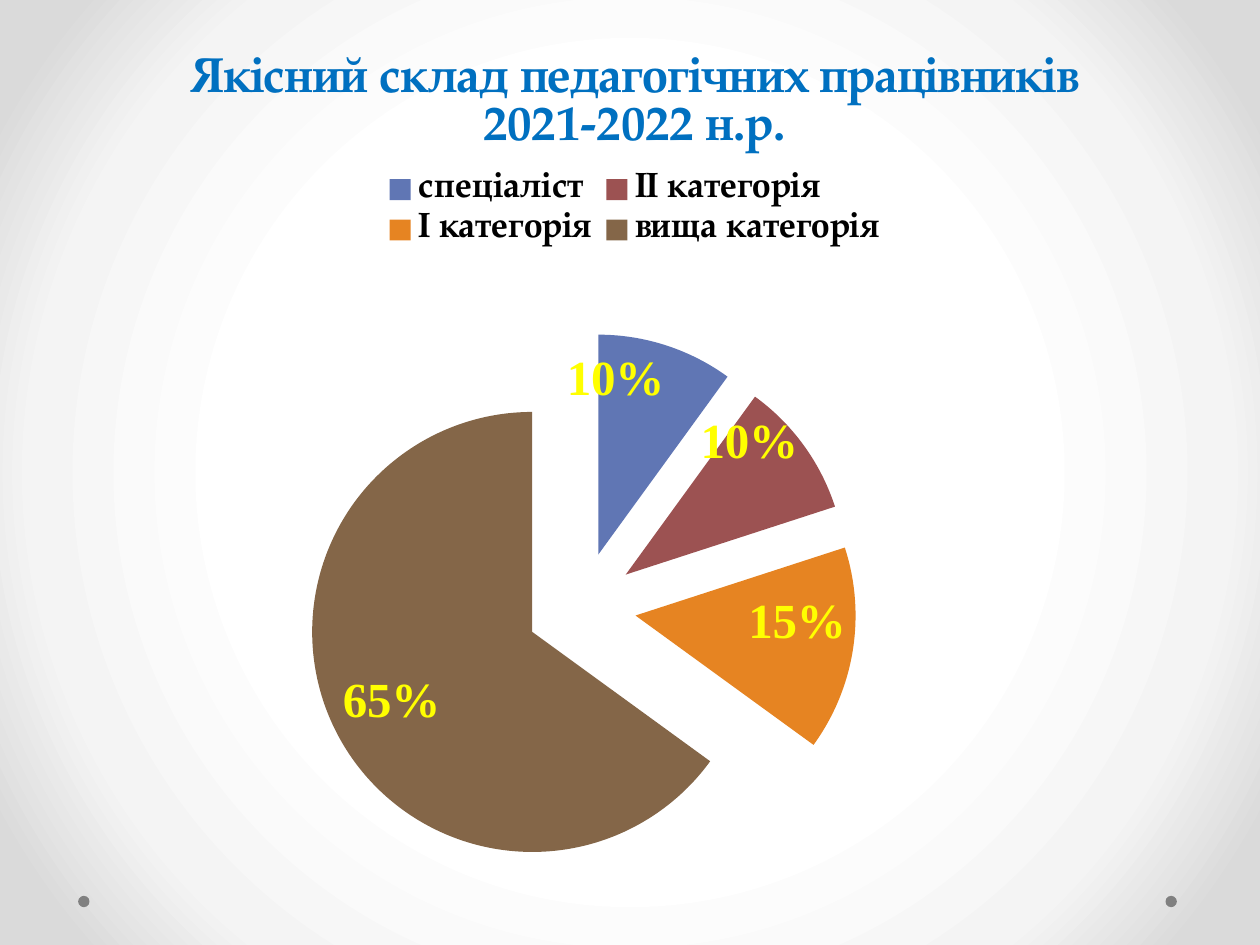
from lxml import etree
from pptx import Presentation
from pptx.chart.data import CategoryChartData
from pptx.dml.color import RGBColor
from pptx.enum import chart as ch, shapes, text
from pptx.oxml import parse_xml
from pptx.oxml.ns import nsdecls, qn
from pptx.util import Inches, Pt

BLUE = RGBColor(0x00, 0x70, 0xC0)
BLACK = RGBColor(0, 0, 0)
YELLOW = RGBColor(0xFF, 0xFF, 0x00)
GRAY = RGBColor(0x80, 0x80, 0x80)
FONT = "TeX Gyre Pagella"

TITLE_LINES = ["Якісний склад педагогічних працівників", "2021-2022 н.р."]
CATEGORIES = [
    ("спеціаліст", 10, RGBColor(0x60, 0x76, 0xB4)),
    ("ІІ категорія", 10, RGBColor(0x9C, 0x52, 0x52)),
    ("І категорія", 15, RGBColor(0xE6, 0x84, 0x22)),
    ("вища категорія", 65, RGBColor(0x84, 0x66, 0x48)),
]


def make_layout(**values):
    """Return a manual chart layout; values are fractions of the chart size."""
    layout = etree.Element(qn("c:layout"))
    manual = etree.SubElement(layout, qn("c:manualLayout"))
    for name, value in values.items():
        etree.SubElement(manual, qn(f"c:{name}")).set("val", str(value))
    return layout


deck = Presentation()
deck.slide_width, deck.slide_height = Inches(10), Inches(7.5)
page = deck.slides.add_slide(deck.slide_layouts[6])

# Radial background
stops = "".join(
    f'<a:gs pos="{position}000"><a:srgbClr val="{color}"/></a:gs>'
    for position, color in [(50, "FFFFFF"), (76, "F4F4F4"), (92, "DADADA")]
)
background = parse_xml(
    f'<p:bg {nsdecls("p", "a")}><p:bgPr><a:gradFill rotWithShape="1">'
    f'<a:gsLst>{stops}</a:gsLst><a:path path="circle">'
    '<a:fillToRect l="50000" t="50000" r="50000" b="50000"/></a:path>'
    '</a:gradFill><a:effectLst/></p:bgPr></p:bg>'
)
page.element.cSld.insert(0, background)

# Corner dots
for left in (9.25, 0.62):
    dot = page.shapes.add_shape(
        shapes.MSO_SHAPE.OVAL, Inches(left), Inches(7.11), Inches(0.09), Inches(0.09)
    )
    dot.shadow.inherit = False
    dot.fill.solid()
    dot.fill.fore_color.rgb = GRAY
    dot.line.fill.background()

# Pie chart
data = CategoryChartData()
data.categories = [name for name, _, _ in CATEGORIES]
data.add_series("Series 1", [value for _, value, _ in CATEGORIES])
chart = page.shapes.add_chart(
    ch.XL_CHART_TYPE.PIE, Inches(0.35), Inches(0.21), Inches(9.37), Inches(6.93), data
).chart
chart.font.name = FONT
chart.font.size = Pt(10)
chart.font.color.rgb = BLACK

chart.has_title = True
title = chart.chart_title.text_frame
title.text = "\n".join(TITLE_LINES)
for para in title.paragraphs:
    para.alignment = text.PP_ALIGN.CENTER
    for span in para.runs:
        span.font.name = FONT
        span.font.size = Pt(28)
        span.font.bold = True
        span.font.color.rgb = BLUE

chart.has_legend = True
legend = chart.legend
legend.position = ch.XL_LEGEND_POSITION.TOP
legend.include_in_layout = False
legend.font.name = FONT
legend.font.size = Pt(20)
legend.font.bold = True
legend.font.color.rgb = BLACK
legend_layout = make_layout(xMode="edge", yMode="edge", x=0.28, y=0.16, w=0.44, h=0.1)
legend._element.find(qn("c:legendPos")).addnext(legend_layout)

plot = chart.plots[0]
plot.vary_by_categories = True
plot_area = plot._element.getparent()
for old_layout in plot_area.findall(qn("c:layout")):
    plot_area.remove(old_layout)
plot_area.insert(0, make_layout(
    layoutTarget="inner", xMode="edge", yMode="edge", x=0.22, y=0.35, w=0.47, h=0.63
))

series = plot.series[0]
for index, (_, _, color) in enumerate(CATEGORIES):
    fill = series.points[index].format.fill
    fill.solid()
    fill.fore_color.rgb = color
explosion = etree.Element(qn("c:explosion"))
explosion.set("val", "25")
series._element.find(qn("c:dPt")).addprevious(explosion)
for point in series._element.findall(qn("c:dPt")):
    point.find(qn("c:spPr")).addprevious(etree.fromstring(etree.tostring(explosion)))

labels = series.data_labels
labels.show_percentage = True
labels.show_value = False
labels.number_format = "0%"
labels.number_format_is_linked = False
labels.position = ch.XL_LABEL_POSITION.INSIDE_END
labels.font.name = "Times New Roman"
labels.font.size = Pt(28)
labels.font.bold = True
labels.font.color.rgb = YELLOW

# The second label sits a little above its usual place
raised = parse_xml(
    f'<c:dLbl {nsdecls("c")}><c:idx val="1"/><c:dLblPos val="inEnd"/>'
    '<c:showLegendKey val="0"/><c:showVal val="0"/><c:showCatName val="0"/>'
    '<c:showSerName val="0"/><c:showPercent val="1"/><c:showBubbleSize val="0"/></c:dLbl>'
)
raised.find(qn("c:idx")).addnext(make_layout(x=0, y=-0.04))
labels._element.insert(0, raised)

deck.save("out.pptx")
